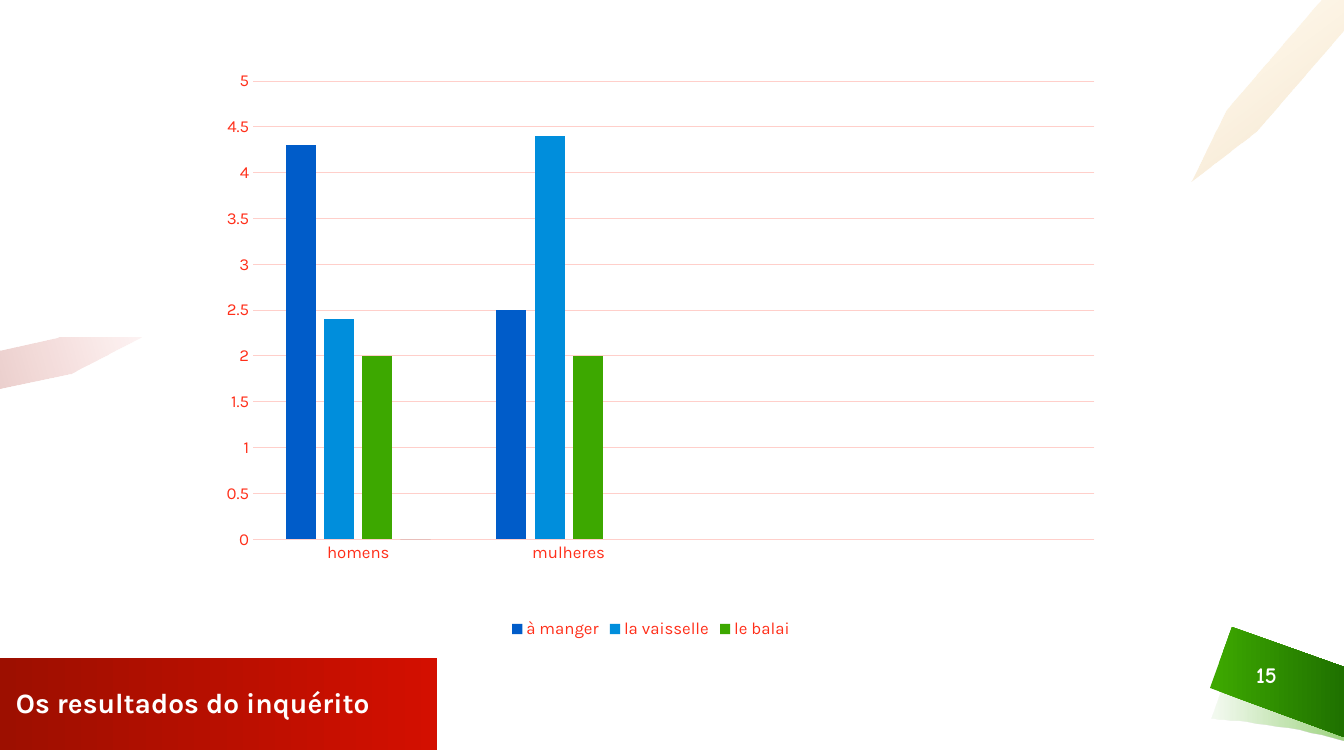
import pptx
import pptx.chart.data
import pptx.enum.chart
import pptx.enum.shapes
import pptx.enum.text
import pptx.oxml
import pptx.oxml.ns
import pptx.util
from pptx.dml.color import RGBColor

# Content
TITLE = "Os resultados do inquérito"
PAGE_NUMBER = "15"
GROUPS = ["homens", "mulheres", "", ""]
CHORES = [
    ("à manger", (4.3, 2.5, None, None), "blue"),
    ("la vaisselle", (2.4, 4.4, None, None), "sky"),
    ("le balai", (2, 2, None, None), "green"),
    ("Series 4", (0, None, None, None), "gray"),
]
HIDDEN_LEGEND_ENTRY = 3
PLOT_AREA = {"x": 0.056, "y": 0.046, "w": 0.939, "h": 0.778}

COLORS = {
    "white": "FFFFFF", "blue": "005CC9", "sky": "008EDC", "green": "3DA800",
    "dark_green": "1F7100", "gray": "4D4D4D", "red": "D30F00",
    "dark_red": "9D0F00", "label": "FF2F1A", "grid": "FFCFCA",
    "gold": "FFAA00", "dark_gold": "C07400",
}
BODY_FONT, NUMBER_FONT = "Karla", "Comic Neue"

# Places in px
PX = 914400 / 100.8
BANNER = (0, 658, 437, 92)
NUMBER_BOX = (1231, 655, 71, 40)
CHART_BOX = (203, 54, 896, 589)


def bezier(start, pull_1, pull_2, end, steps=16):
    """Points along a cubic curve."""
    points = []
    for step in range(steps + 1):
        t = step / steps
        weights = ((1 - t) ** 3, 3 * t * (1 - t) ** 2, 3 * t * t * (1 - t), t ** 3)
        points.append(tuple(
            sum(w * p[axis] for w, p in zip(weights, (start, pull_1, pull_2, end)))
            for axis in (0, 1)))
    return points


# Outline, gradient stops (position, colour, opacity in %), angle
ORNAMENTS = [
    (bezier((1212, 719), (1212, 719), (1288, 724), (1344, 741))
     + bezier((1344, 673), (1282, 656), (1234, 657), (1234, 657)),
     [(3, "green", 6), (100, "green", 50)], 0),
    ([(1344, 667), (1232, 627), (1210, 688), (1344, 737)],
     [(3, "green", 100), (100, "dark_green", 100)], 0),
    ([(141, 338), (58, 338), (0, 351), (0, 389), (71, 374)],
     [(0, "red", 5), (100, "dark_red", 20)], 164),
    ([(1322, 0), (1227, 110), (1192, 181), (1257, 131), (1344, 31), (1344, 0)],
     [(0, "gold", 5), (100, "dark_gold", 20)], 53),
]


def emu(box):
    return [round(length * PX) for length in box]


def rgb(name):
    return RGBColor.from_string(COLORS[name])


def style_font(font, size, color, name=BODY_FONT, bold=False):
    font.size = pptx.util.Pt(size)
    font.name = name
    font.bold = bold
    font.color.rgb = rgb(color)


def paint(shape, stops, angle):
    """Gradient fill with opacity, no outline, no shadow."""
    shape.shadow.inherit = False
    shape.line.fill.background()
    shape.fill.background()
    stop_xml = "".join(
        f'<a:gs pos="{pos * 1000}"><a:srgbClr val="{COLORS[color]}">'
        f'<a:alpha val="{opacity * 1000}"/></a:srgbClr></a:gs>'
        for pos, color, opacity in stops)
    gradient = pptx.oxml.parse_xml(
        f'<a:gradFill {pptx.oxml.ns.nsdecls("a")} rotWithShape="1">'
        f'<a:gsLst>{stop_xml}</a:gsLst>'
        f'<a:lin ang="{angle * 60000}" scaled="0"/></a:gradFill>')
    properties = shape.element.spPr
    properties.replace(properties.find(pptx.oxml.ns.qn("a:noFill")), gradient)


def add_ornament(slide, outline, stops, angle):
    builder = slide.shapes.build_freeform(*outline[0], scale=PX)
    builder.add_line_segments(outline[1:], close=True)
    paint(builder.convert_to_shape(), stops, angle)


def add_banner(slide):
    banner = slide.shapes.add_shape(
        pptx.enum.shapes.MSO_SHAPE.RECTANGLE, *emu(BANNER))
    paint(banner, [(0, "red", 100), (100, "dark_red", 100)], 180)
    frame = banner.text_frame
    frame.word_wrap = True
    frame.vertical_anchor = pptx.enum.text.MSO_ANCHOR.MIDDLE
    (frame.margin_left, frame.margin_top,
     frame.margin_right, frame.margin_bottom) = emu((16, 5, 10, 5))
    frame.text = TITLE
    heading = frame.paragraphs[0]
    heading.alignment = pptx.enum.text.PP_ALIGN.LEFT
    heading.line_spacing = 0.9
    style_font(heading.runs[0].font, 20, "white", bold=True)


def add_page_number(slide):
    frame = slide.shapes.add_textbox(*emu(NUMBER_BOX)).text_frame
    frame.word_wrap = True
    frame.vertical_anchor = pptx.enum.text.MSO_ANCHOR.MIDDLE
    frame.text = PAGE_NUMBER
    number = frame.paragraphs[0]
    number.alignment = pptx.enum.text.PP_ALIGN.CENTER
    style_font(number.runs[0].font, 16, "white", NUMBER_FONT, bold=True)


def add_survey(slide):
    survey = pptx.chart.data.CategoryChartData()
    survey.categories = GROUPS
    for chore, values, _ in CHORES:
        survey.add_series(chore, values)
    chart = slide.shapes.add_chart(
        pptx.enum.chart.XL_CHART_TYPE.COLUMN_CLUSTERED,
        *emu(CHART_BOX), survey).chart
    style_font(chart.font, 10, "dark_red")
    chart.has_title = False

    # Columns
    columns = chart.plots[0]
    columns.vary_by_categories = False
    columns.gap_width, columns.overlap = 219, -27
    for series, (_, _, color) in zip(columns.series, CHORES):
        series.format.fill.solid()
        series.format.fill.fore_color.rgb = rgb(color)

    # Axes
    for axis in (chart.category_axis, chart.value_axis):
        axis.major_tick_mark = pptx.enum.chart.XL_TICK_MARK.NONE
        axis.minor_tick_mark = pptx.enum.chart.XL_TICK_MARK.NONE
        style_font(axis.tick_labels.font, 12, "label")
    chart.value_axis.format.line.fill.background()
    chart.value_axis.minimum_scale = 0
    chart.value_axis.maximum_scale = 5
    chart.value_axis.major_unit = 0.5
    for line in (chart.category_axis.format.line,
                 chart.value_axis.major_gridlines.format.line):
        line.color.rgb = rgb("grid")
        line.width = pptx.util.Pt(0.75)

    # Legend without the empty series
    chart.has_legend = True
    legend = chart.legend
    legend.position = pptx.enum.chart.XL_LEGEND_POSITION.BOTTOM
    legend.include_in_layout = False
    style_font(legend.font, 12, "label")
    namespace = pptx.oxml.ns.nsdecls("c")
    qn = pptx.oxml.ns.qn
    chart_xml = chart.plots[0]._element.getparent().getparent()
    chart_xml.find(".//" + qn("c:legendPos")).addnext(pptx.oxml.parse_xml(
        f'<c:legendEntry {namespace}><c:idx val="{HIDDEN_LEGEND_ENTRY}"/>'
        '<c:delete val="1"/></c:legendEntry>'))

    # Fixed inner plot area
    plot_xml = chart_xml.find(qn("c:plotArea"))
    for layout in plot_xml.findall(qn("c:layout")):
        plot_xml.remove(layout)
    sizes = "".join(f'<c:{key} val="{part}"/>' for key, part in PLOT_AREA.items())
    plot_xml.insert(0, pptx.oxml.parse_xml(
        f'<c:layout {namespace}><c:manualLayout><c:layoutTarget val="inner"/>'
        f'<c:xMode val="edge"/><c:yMode val="edge"/>{sizes}'
        '</c:manualLayout></c:layout>'))


def main():
    deck = pptx.Presentation()
    deck.slide_width, deck.slide_height = emu((1344, 756))
    slide = deck.slides.add_slide(deck.slide_layouts[6])
    for outline, stops, angle in ORNAMENTS:
        add_ornament(slide, outline, stops, angle)
    add_banner(slide)
    add_page_number(slide)
    add_survey(slide)
    deck.save("out.pptx")


if __name__ == "__main__":
    main()
